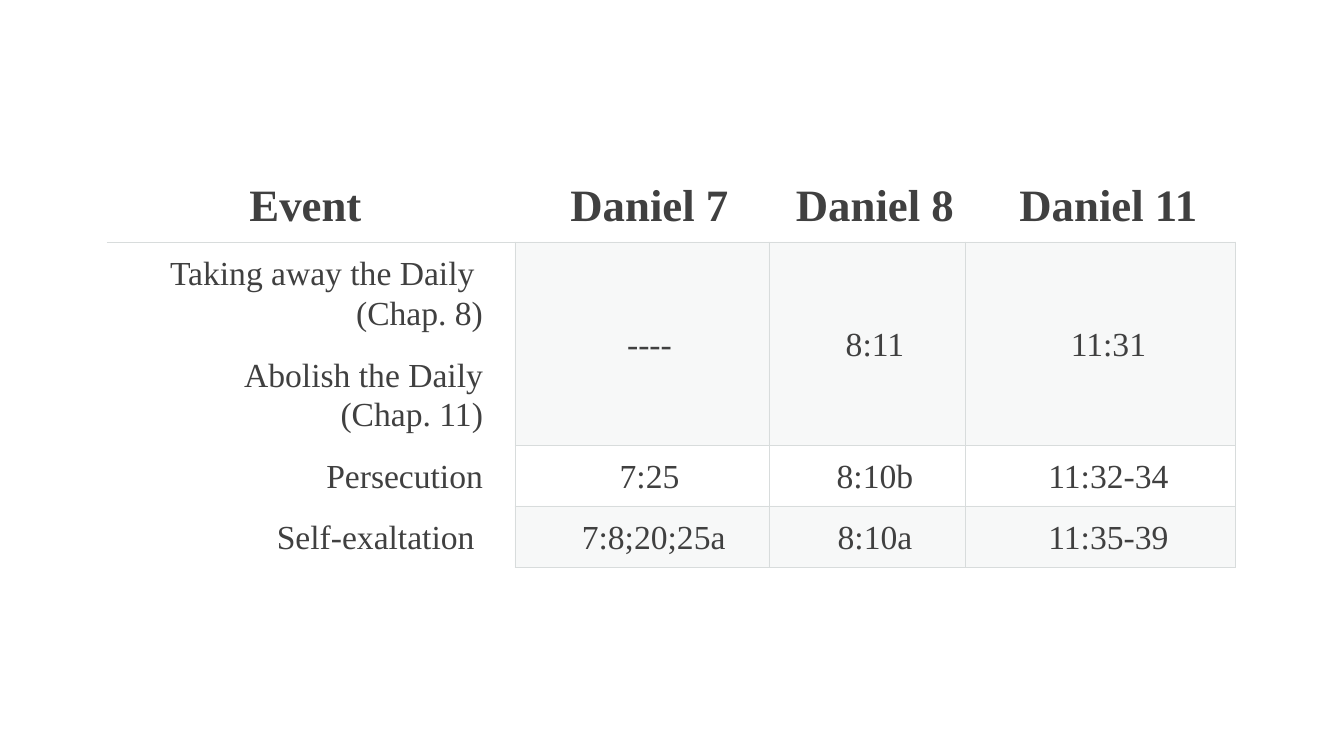
import dataclasses

import lxml.etree
import pptx
import pptx.dml.color
import pptx.enum.text
import pptx.oxml.ns
import pptx.util

PX = 9071  # EMU per px, at 100.8 px to the inch


@dataclasses.dataclass(frozen=True)
class Theme:
    font: str = "Times New Roman"
    text: str = "404040"
    line: str = "D8DCDC"
    band: str = "D8DEDC"
    band_alpha: int = 20
    line_width: float = 0.75
    heading_size: int = 32
    body_size: int = 24
    group_gap: int = 16
    spacing: float = 1.07


THEME = Theme()
ALIGN = pptx.enum.text.PP_ALIGN

COLUMN_WIDTHS = [408, 254, 197, 270]
ROW_HEIGHTS = [74, 203, 61, 61]
HEADINGS = ["Event", "Daniel 7", "Daniel 8", "Daniel 11"]
# Each event is a list of groups of lines, followed by its verses
EVENTS = [
    ([["Taking away the Daily ", "(Chap. 8)"], ["Abolish the Daily", "(Chap. 11)"]],
     ["----", "8:11", "11:31"]),
    ([["Persecution"]], ["7:25", "8:10b", "11:32-34"]),
    ([["Self-exaltation "]], [" 7:8;20;25a", "8:10a", "11:35-39"]),
]


def px(length):
    return pptx.util.Emu(length * PX)


def add_element(parent, tag, **attributes):
    return lxml.etree.SubElement(parent, pptx.oxml.ns.qn(tag), attributes)


def write_text(para, text, size=THEME.body_size, bold=False, align=ALIGN.CENTER, gap=0):
    para.alignment = align
    para.line_spacing = THEME.spacing
    para.space_before = pptx.util.Pt(gap)
    span = para.add_run()
    span.text = text
    span.font.name = THEME.font
    span.font.size = pptx.util.Pt(size)
    span.font.bold = bold
    span.font.color.rgb = pptx.dml.color.RGBColor.from_string(THEME.text)


def format_cell(cell, sides, banded=False, right_inset=6):
    """Set insets, the borders on the named sides, and the fill."""
    cell.vertical_anchor = pptx.enum.text.MSO_ANCHOR.MIDDLE
    cell.margin_left, cell.margin_right = px(21), px(right_inset)
    cell.margin_top = cell.margin_bottom = px(10)
    properties = cell._tc.get_or_add_tcPr()
    for side in "LRTB":
        width = pptx.util.Pt(THEME.line_width)
        border = add_element(properties, f"a:ln{side}", w=str(int(width)))
        if side in sides:
            color = add_element(border, "a:solidFill")
            add_element(color, "a:srgbClr", val=THEME.line)
        else:
            add_element(border, "a:noFill")
    if banded:
        cell.fill.solid()
        cell.fill.fore_color.rgb = pptx.dml.color.RGBColor.from_string(THEME.band)
        fill = properties.find(pptx.oxml.ns.qn("a:solidFill"))
        add_element(fill[0], "a:alpha", val=str(THEME.band_alpha * 1000))
    else:
        cell.fill.background()


def fill_header(table):
    for column, heading in enumerate(HEADINGS):
        cell = table.cell(0, column)
        format_cell(cell, "B", right_inset=6 if column else 32)
        write_text(cell.text_frame.paragraphs[0], heading,
                   size=THEME.heading_size, bold=True)


def fill_event(cell, groups, sides):
    format_cell(cell, sides, right_inset=32)
    frame = cell.text_frame
    for group_index, group in enumerate(groups):
        for line_index, line in enumerate(group):
            first = group_index == line_index == 0
            para = frame.paragraphs[0] if first else frame.add_paragraph()
            gap = THEME.group_gap if group_index and not line_index else 0
            write_text(para, line, align=ALIGN.RIGHT, gap=gap)


def add_event_table(page, left, top):
    box = page.shapes.add_table(len(ROW_HEIGHTS), len(COLUMN_WIDTHS), px(left), px(top),
                                px(sum(COLUMN_WIDTHS)), px(sum(ROW_HEIGHTS)))
    table = box.table
    table.first_row = table.horz_banding = False
    for column, width in zip(table.columns, COLUMN_WIDTHS):
        column.width = px(width)
    for row, height in zip(table.rows, ROW_HEIGHTS):
        row.height = px(height)

    # Headings
    fill_header(table)

    # Events with their verses
    for row, (groups, verses) in enumerate(EVENTS, start=1):
        fill_event(table.cell(row, 0), groups, "TR" if row == 1 else "R")
        for column, verse in enumerate(verses, start=1):
            cell = table.cell(row, column)
            format_cell(cell, "LRTB", banded=row % 2 == 1)
            write_text(cell.text_frame.paragraphs[0], verse)


def main():
    deck = pptx.Presentation()
    deck.slide_width, deck.slide_height = px(1344), px(756)
    page = deck.slides.add_slide(deck.slide_layouts[6])
    add_event_table(page, left=107, top=168)
    deck.save("out.pptx")


if __name__ == "__main__":
    main()
